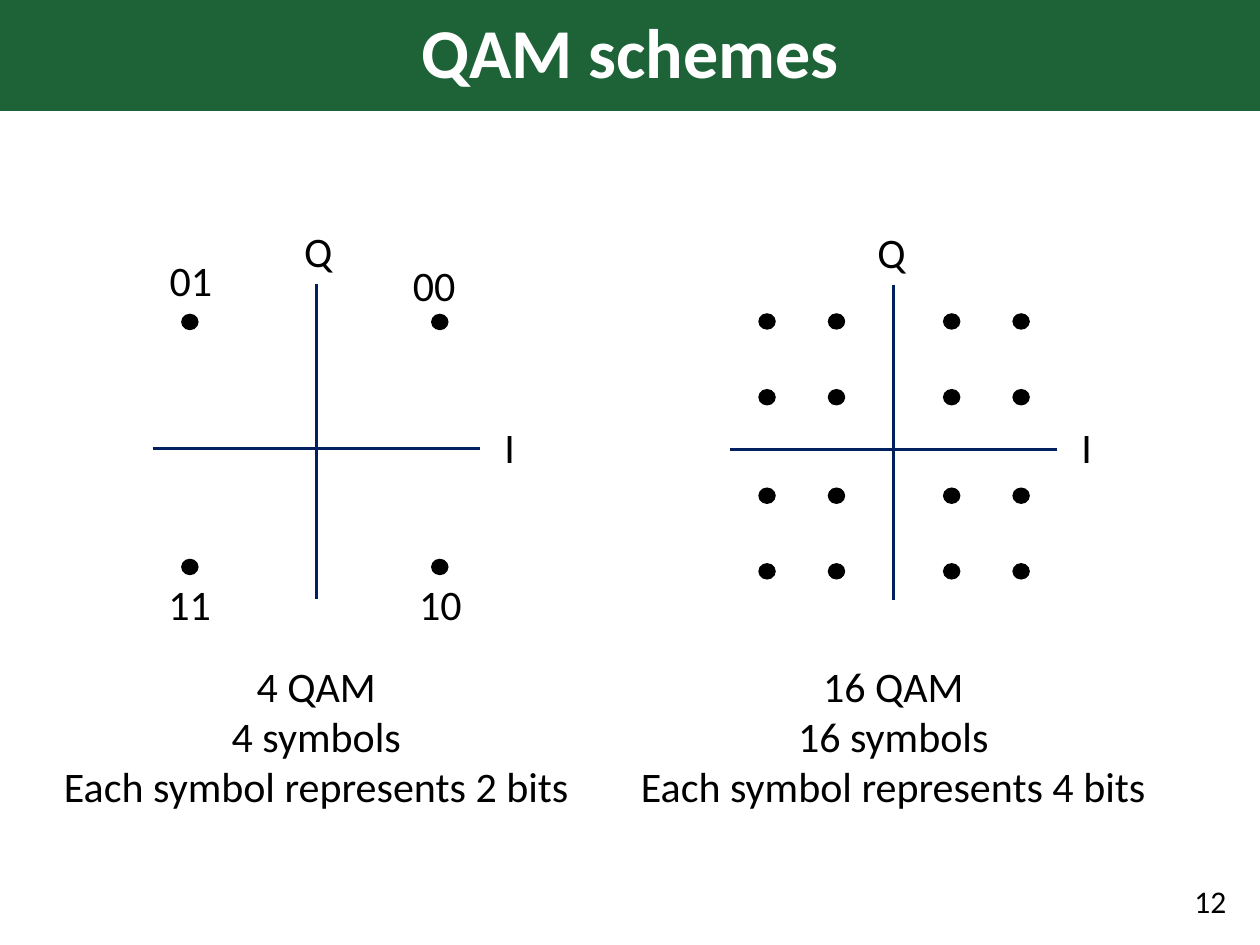
from itertools import product
from lxml.etree import SubElement
from pptx import Presentation
from pptx.dml.color import RGBColor
from pptx.enum.shapes import MSO_CONNECTOR, MSO_SHAPE
from pptx.enum.text import MSO_ANCHOR, PP_ALIGN
from pptx.oxml.ns import qn
from pptx.util import Pt

GREEN = RGBColor(0x1E, 0x62, 0x38)
NAVY = RGBColor(0x00, 0x20, 0x60)
BLACK = RGBColor(0x00, 0x00, 0x00)
WHITE = RGBColor(0xFF, 0xFF, 0xFF)

HEADING = {"name": "Calibri", "size": Pt(40), "bold": True}
BODY = {"name": "Calibri", "size": Pt(24)}
FOOTER = {"name": "Calibri", "size": Pt(18)}


def write(frame, lines, style, color, align):
    frame.word_wrap = True
    frame.text = "\n".join(lines)
    for paragraph in frame.paragraphs:
        paragraph.alignment = align
        for run in paragraph.runs:
            for attribute, value in style.items():
                setattr(run.font, attribute, value)
            run.font.color.rgb = color


def add_centred_text(lines, center, top, width, height):
    box = slide.shapes.add_textbox(Pt(center - width / 2), Pt(top), Pt(width), Pt(height))
    write(box.text_frame, lines, BODY, BLACK, PP_ALIGN.CENTER)


prs = Presentation()
prs.slide_width, prs.slide_height = Pt(720), Pt(540)
slide = prs.slides.add_slide(prs.slide_layouts[5])

heading = slide.shapes.title
heading.left, heading.top, heading.width, heading.height = Pt(0), Pt(0), Pt(720), Pt(63.4)
heading.fill.solid()
heading.fill.fore_color.rgb = GREEN
heading.text_frame.vertical_anchor = MSO_ANCHOR.MIDDLE
write(heading.text_frame, ["QAM schemes"], HEADING, WHITE, PP_ALIGN.CENTER)
heading.text_frame.paragraphs[0].line_spacing = 0.9

page_number = slide.shapes.add_textbox(Pt(545.8), Pt(500.4), Pt(162), Pt(28.8))
page_number.text_frame.vertical_anchor = MSO_ANCHOR.MIDDLE
write(page_number.text_frame, ["12"], FOOTER, BLACK, PP_ALIGN.RIGHT)

schemes = [
    {"symbols": 4, "bits": 2, "center": 180.8, "axis_top": 162, "axis_y": 256.3,
     "columns": [108.5, 251.3], "rows": [184, 324],
     "labels": [("Q", 181.8, 125.3), ("I", 291.2, 237.6), ("01", 109, 141.8),
                ("00", 248, 144.7), ("11", 108.4, 326.9), ("10", 251.6, 326.9)]},
    {"symbols": 16, "bits": 4, "center": 510.5, "axis_top": 162.7, "axis_y": 257,
     "columns": [438.3, 478, 543.8, 583.5], "rows": [183.7, 227, 283.3, 326.5],
     "labels": [("Q", 509.4, 126), ("I", 621, 237.6)]},
]

AXIS_HALF = 93.6
AXIS_HEIGHT = 180
DOT_WIDTH, DOT_HEIGHT = 10, 9.4

for scheme in schemes:
    center, axis_top, axis_y = scheme["center"], scheme["axis_top"], scheme["axis_y"]

    for ends in [(center, axis_top, center, axis_top + AXIS_HEIGHT),
                 (center - AXIS_HALF, axis_y, center + AXIS_HALF, axis_y)]:
        axis = slide.shapes.add_connector(MSO_CONNECTOR.STRAIGHT, *map(Pt, ends))
        axis.line.color.rgb = NAVY
        axis.line.width = Pt(1.5)
        SubElement(axis._element.spPr, qn("a:effectLst"))

    for y, x in product(scheme["rows"], scheme["columns"]):
        dot = slide.shapes.add_shape(MSO_SHAPE.OVAL, Pt(x - DOT_WIDTH / 2),
                                     Pt(y - DOT_HEIGHT / 2), Pt(DOT_WIDTH), Pt(DOT_HEIGHT))
        dot.shadow.inherit = False
        dot.fill.solid()
        dot.fill.fore_color.rgb = BLACK
        dot.line.fill.background()

    for label, label_center, label_top in scheme["labels"]:
        add_centred_text([label], label_center, label_top, 101.5, 36)

    caption = [f"{scheme['symbols']} QAM", f"{scheme['symbols']} symbols",
               f"Each symbol represents {scheme['bits']} bits"]
    add_centred_text(caption, center, 373.7, 388, 94.3)

prs.save("out.pptx")
